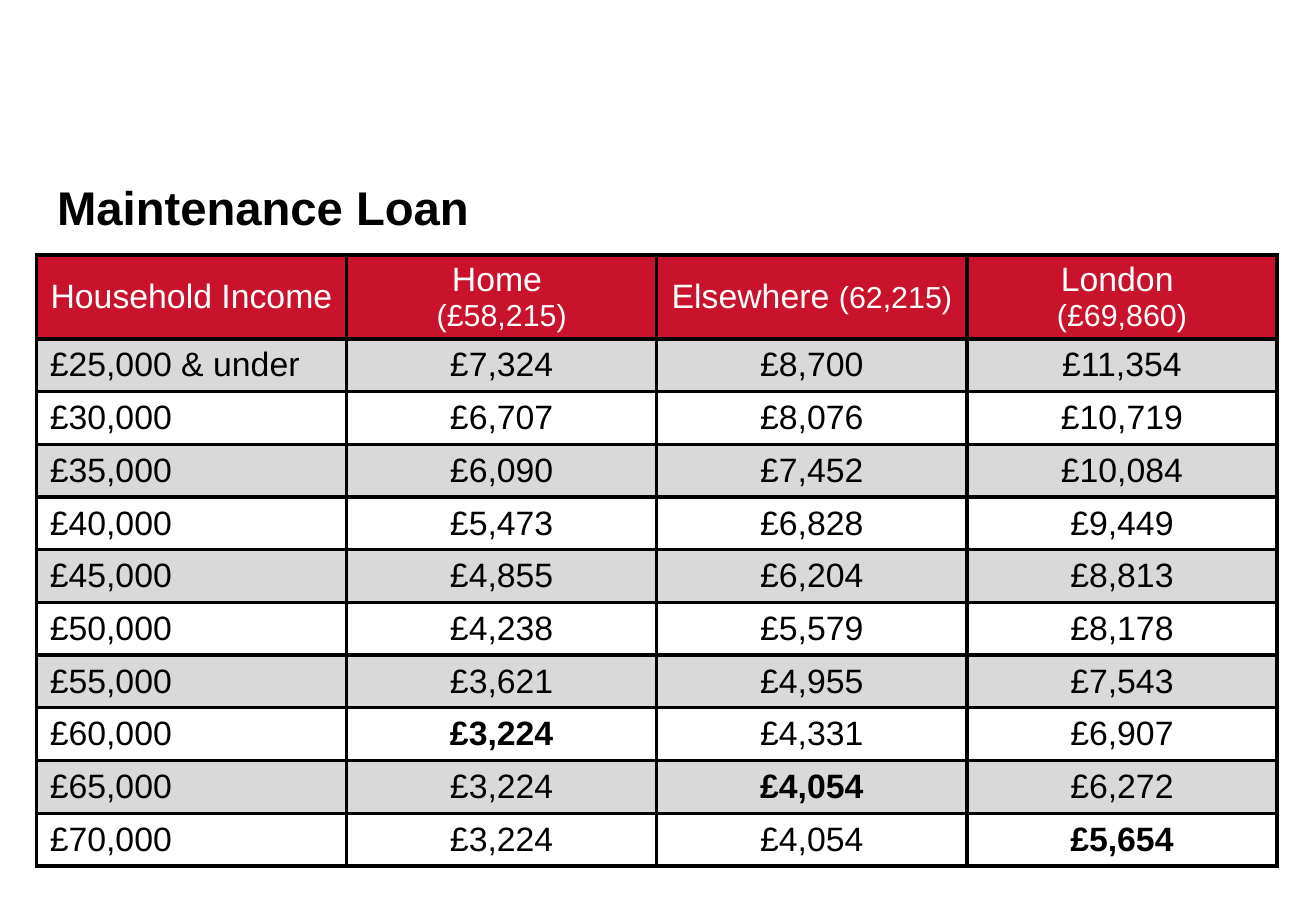
from dataclasses import dataclass

from lxml.etree import SubElement
from pptx import Presentation
from pptx.dml.color import RGBColor as RGB
from pptx.enum.text import MSO_ANCHOR as Anchor, PP_ALIGN as Align
from pptx.oxml.ns import qn
from pptx.util import Inches, Pt


@dataclass(frozen=True)
class Theme:
    """Colours, font and type sizes of the slide."""
    font: str = "Arial"
    ink: str = "000000"
    paper: str = "FFFFFF"
    header: str = "C9122B"
    band: str = "D9D9D9"
    title_size: float = 28
    body_size: float = 20
    note_size: float = 18
    border: float = 2.25


THEME = Theme()

HEADINGS = [
    [["Household Income "]],
    [["Home "], ["(£58,215)"]],
    [["Elsewhere ", "(62,215)"]],
    [["London "], ["(£69,860)"]],
]

LOANS = [
    ("£25,000 & under", "£7,324", "£8,700", "£11,354"),
    ("£30,000", "£6,707", "£8,076", "£10,719"),
    ("£35,000", "£6,090", "£7,452", "£10,084"),
    ("£40,000", "£5,473", "£6,828", "£9,449"),
    ("£45,000", "£4,855", "£6,204", "£8,813"),
    ("£50,000", "£4,238", "£5,579", "£8,178"),
    ("£55,000", "£3,621", "£4,955", "£7,543"),
    ("£60,000", "£3,224", "£4,331", "£6,907"),
    ("£65,000", "£3,224", "£4,054", "£6,272"),
    ("£70,000", "£3,224", "£4,054", "£5,654"),
]

MINIMUM_LOANS = {(8, 1), (9, 2), (10, 3)}


def add_text(paragraph, text, size=THEME.body_size, color=THEME.ink, bold=False, align=Align.LEFT):
    """Add a formatted run to a paragraph."""
    paragraph.alignment = align
    run = paragraph.add_run()
    run.text = text
    run.font.name = THEME.font
    run.font.size = Pt(size)
    run.font.bold = bold
    run.font.color.rgb = RGB.from_string(color)


def add_title(slide, text):
    """Place the slide title above the table."""
    title = slide.shapes.add_textbox(Inches(0.47), Inches(1.47), Inches(9.98), Inches(0.94))
    frame = title.text_frame
    frame.word_wrap = True
    frame.margin_left = frame.margin_right = frame.margin_top = frame.margin_bottom = 0
    add_text(frame.paragraphs[0], text, size=THEME.title_size, bold=True)


def style_cell(cell, fill, padding=Inches(0.05)):
    """Give a cell its borders, fill, margins and anchor."""
    properties = cell._tc.get_or_add_tcPr()
    for side in ("a:lnL", "a:lnR", "a:lnT", "a:lnB"):
        line = SubElement(properties, qn(side), w=str(Pt(THEME.border)))
        solid = SubElement(line, qn("a:solidFill"))
        SubElement(solid, qn("a:srgbClr"), val=THEME.ink)
    cell.fill.solid()
    cell.fill.fore_color.rgb = RGB.from_string(fill)
    cell.margin_left = cell.margin_right = Inches(0.11)
    cell.margin_top = cell.margin_bottom = padding
    cell.vertical_anchor = Anchor.MIDDLE


def fill_heading(cell, lines):
    """Write a column heading, with the income limit in smaller type."""
    style_cell(cell, THEME.header, padding=Inches(0.02))
    frame = cell.text_frame
    for index, parts in enumerate(lines):
        paragraph = frame.add_paragraph() if index else frame.paragraphs[0]
        for part in parts:
            size = THEME.note_size if part.startswith("(") else THEME.body_size
            add_text(paragraph, part, size=size, color=THEME.paper, align=Align.CENTER)


def add_loan_table(slide):
    """Build the table of loans by household income."""
    header_height, body_height = Inches(0.69), Inches(4.33)
    width = Inches(10.21)
    table = slide.shapes.add_table(
        len(LOANS) + 1, len(HEADINGS), Inches(0.3), Inches(2.1), width, header_height + body_height
    ).table
    for column in table.columns:
        column.width = width // len(HEADINGS)
    for index, row in enumerate(table.rows):
        row.height = body_height // len(LOANS) if index else header_height

    for column, lines in enumerate(HEADINGS):
        fill_heading(table.cell(0, column), lines)
    for row, amounts in enumerate(LOANS, start=1):
        for column, amount in enumerate(amounts):
            cell = table.cell(row, column)
            style_cell(cell, THEME.band if row % 2 else THEME.paper)
            add_text(
                cell.text_frame.paragraphs[0],
                amount,
                bold=(row, column) in MINIMUM_LOANS,
                align=Align.CENTER if column else Align.LEFT,
            )


def main():
    """Create the maintenance loan slide."""
    deck = Presentation()
    deck.slide_width, deck.slide_height = Inches(10.83), Inches(7.5)
    slide = deck.slides.add_slide(deck.slide_layouts[6])
    add_title(slide, "Maintenance Loan")
    add_loan_table(slide)
    deck.save("out.pptx")


if __name__ == "__main__":
    main()
